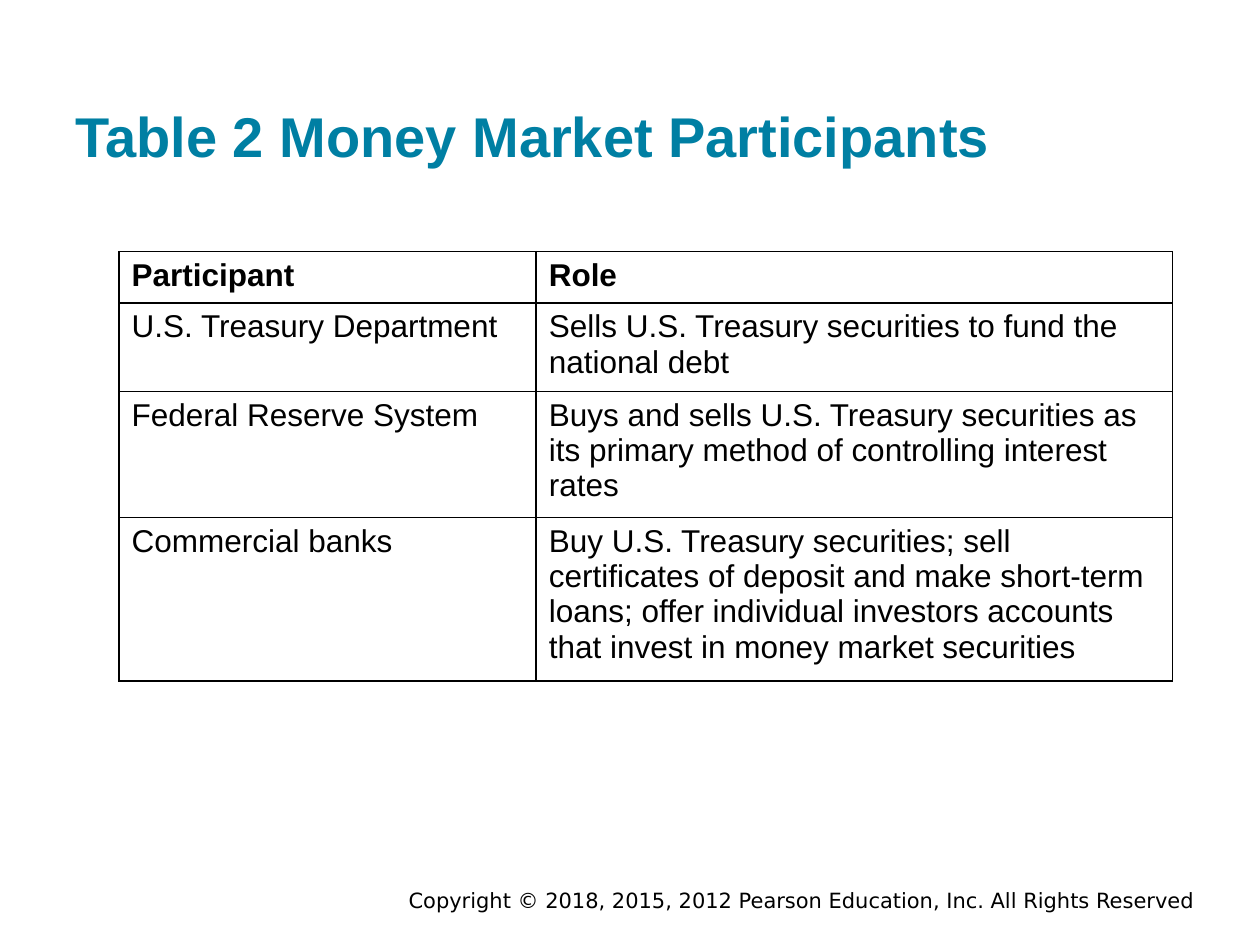
from lxml.etree import SubElement
from pptx import Presentation
from pptx.dml.color import RGBColor
from pptx.enum.text import MSO_ANCHOR, PP_ALIGN
from pptx.oxml.ns import qn
from pptx.util import Cm, Pt

# Content
TITLE = "Table 2 Money Market Participants"
COPYRIGHT = "Copyright © 2018, 2015, 2012 Pearson Education, Inc. All Rights Reserved"
# Each row: participant, role, lines of text in the row
PARTICIPANTS = [
    ("Participant", "Role", 1),
    ("U.S. Treasury Department",
     "Sells U.S. Treasury securities to fund the national debt", 2),
    ("Federal Reserve System",
     "Buys and sells U.S. Treasury securities as its primary method of "
     "controlling interest rates", 3),
    ("Commercial banks",
     "Buy U.S. Treasury securities; sell certificates of deposit and make "
     "short-term loans; offer individual investors accounts that invest in "
     "money market securities", 4),
]
COLORS = {"title": "007FA3", "text": "000000", "border": "000000", "cell": "FFFFFF"}

# Table measures in centimetres
COLUMN_WIDTHS = (8.41, 12.83)
MIN_ROW_HEIGHT, LINE_HEIGHT, ROW_PADDING = 1.04, 0.71, 0.25


def add_run(paragraph, text, size, font="Arial", color="text", bold=False):
    run = paragraph.add_run()
    run.text = text
    run.font.size = Pt(size)
    run.font.name = font
    run.font.bold = bold
    run.font.color.rgb = RGBColor.from_string(COLORS[color])


def add_text_frame(slide, left, top, width, height, anchor, margin):
    frame = slide.shapes.add_textbox(Cm(left), Cm(top), Cm(width), Cm(height)).text_frame
    frame.word_wrap = True
    frame.vertical_anchor = anchor
    frame.margin_top = frame.margin_bottom = Cm(margin)
    return frame


def add_borders(cell):
    properties = cell._tc.get_or_add_tcPr()
    for side in ("lnL", "lnR", "lnT", "lnB"):
        border = SubElement(properties, qn(f"a:{side}"), w=str(Pt(1)))
        fill = SubElement(border, qn("a:solidFill"))
        SubElement(fill, qn("a:srgbClr"), val=COLORS["border"])


def add_participants_table(slide):
    heights = [max(MIN_ROW_HEIGHT, ROW_PADDING + LINE_HEIGHT * lines)
               for *_, lines in PARTICIPANTS]
    table = slide.shapes.add_table(
        len(PARTICIPANTS), len(COLUMN_WIDTHS), Cm(2.4), Cm(5.07),
        Cm(sum(COLUMN_WIDTHS)), Cm(sum(heights))).table
    table.horz_banding = False
    for column, width in zip(table.columns, COLUMN_WIDTHS):
        column.width = Cm(width)
    for r, (*texts, _) in enumerate(PARTICIPANTS):
        table.rows[r].height = Cm(heights[r])
        for c, text in enumerate(texts):
            cell = table.cell(r, c)
            add_borders(cell)
            cell.fill.solid()
            cell.fill.fore_color.rgb = RGBColor.from_string(COLORS["cell"])
            add_run(cell.text_frame.paragraphs[0], text, 18, bold=r == 0)


def main():
    presentation = Presentation()
    presentation.slide_width, presentation.slide_height = Cm(25.4), Cm(19.05)
    slide = presentation.slides.add_slide(presentation.slide_layouts[6])

    # Copyright line
    footer = add_text_frame(slide, 4.45, 17.86, 19.89, 0.56, MSO_ANCHOR.MIDDLE, 0.13)
    footer.paragraphs[0].alignment = PP_ALIGN.RIGHT
    add_run(footer.paragraphs[0], COPYRIGHT, 12, font="DejaVu Sans")

    # Title
    title = add_text_frame(slide, 1.27, 0.61, 23.47, 3.05, MSO_ANCHOR.BOTTOM, 0.25)
    add_run(title.paragraphs[0], TITLE, 32, color="title", bold=True)

    # Participants and their roles
    add_participants_table(slide)
    presentation.save("out.pptx")


if __name__ == "__main__":
    main()
